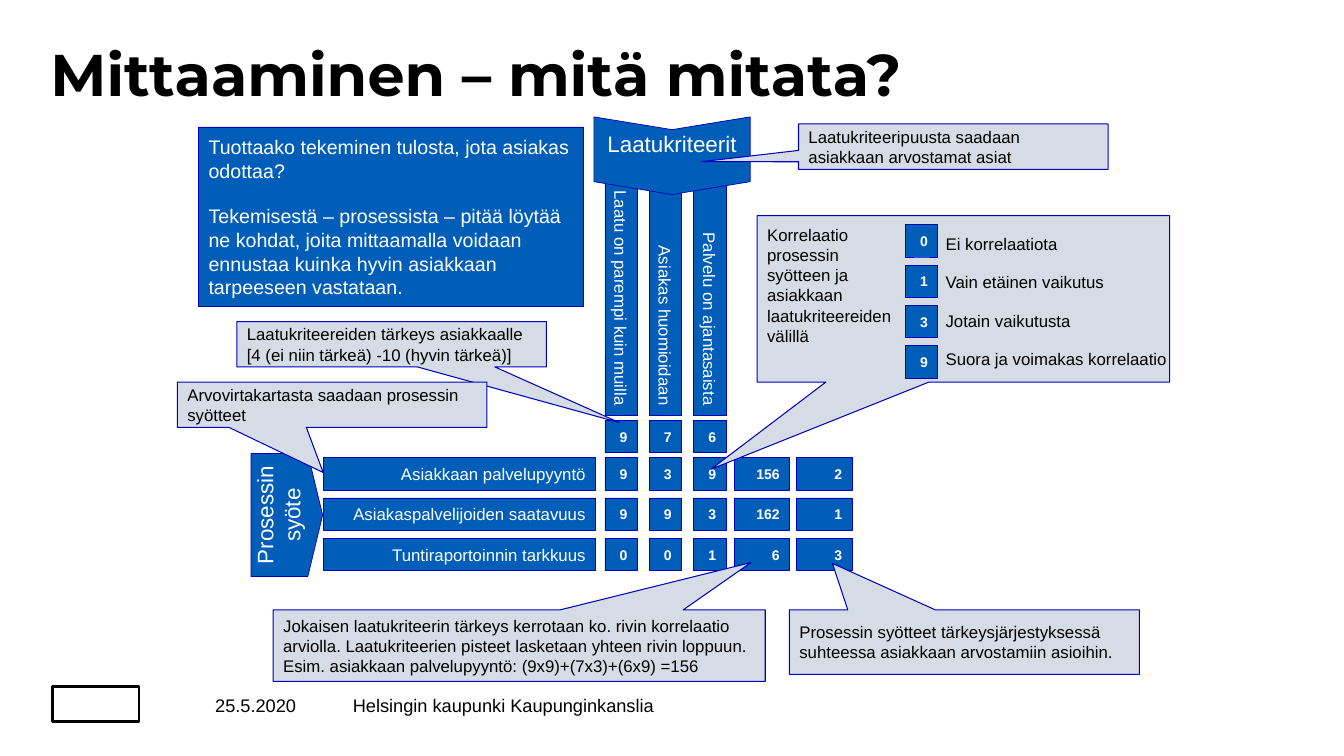
import pptx
import pptx.util
import pptx.dml.color
import pptx.enum.shapes
import pptx.enum.text

Inches = pptx.util.Inches
PRESET = pptx.enum.shapes.MSO_SHAPE
ALIGN = pptx.enum.text.PP_ALIGN
ANCHOR = pptx.enum.text.MSO_ANCHOR

BLUE, OUTLINE, GREY = "005EB8", "0000BF", "D6DCE5"
WHITE, BLACK = "FFFFFF", "000000"
CELL = 0.32

CRITERIA = [
    ("Laatu on parempi kuin muilla", "9"),
    ("Asiakas huomioidaan", "7"),
    ("Palvelu on ajantasaista", "6"),
]
INPUTS = [
    ("Asiakkaan palvelupyyntö", ["9", "3", "9"], ["156", "2"]),
    ("Asiakaspalvelijoiden saatavuus", ["9", "9", "3"], ["162", "1"]),
    ("Tuntiraportoinnin tarkkuus", ["0", "0", "1"], ["6", "3"]),
]
CORRELATIONS = [
    ("0", "Ei korrelaatiota"),
    ("1", "Vain etäinen vaikutus"),
    ("3", "Jotain vaikutusta"),
    ("9", "Suora ja voimakas korrelaatio"),
]
CALLOUTS = [
    ((2.35, 3.19, 3.07, 0.45), (0.736, 1.729),
     ["Laatukriteereiden tärkeys asiakkaalle [4 (ei niin tärkeä) -10 (hyvin tärkeä)]"]),
    ((2.71, 6.05, 4.88, 0.71), (0.471, -1.161),
     ["Jokaisen laatukriteerin tärkeys kerrotaan ko. rivin korrelaatio arviolla. "
      "Laatukriteerien pisteet lasketaan yhteen rivin loppuun.",
      "Esim. asiakkaan palvelupyyntö: (9x9)+(7x3)+(6x9) =156"]),
    ((7.83, 6.05, 3.47, 0.64), (-0.377, -1.219),
     ["Prosessin syötteet tärkeysjärjestyksessä suhteessa asiakkaan arvostamiin asioihin."]),
    ((7.92, 1.23, 3.07, 0.45), (-0.813, 0.332),
     ["Laatukriteeripuusta saadaan asiakkaan arvostamat asiat"]),
    ((1.76, 3.79, 3.07, 0.45), (-0.029, 1.494),
     ["Arvovirtakartasta saadaan prosessin syötteet"]),
]


def rgb(colour):
    return pptx.dml.color.RGBColor.from_string(colour)


def write(shape, paragraphs, size=12, colour=BLACK, bold=False, font="Arial",
          align=ALIGN.LEFT, anchor=ANCHOR.MIDDLE, wrap=True,
          insets=(0.1, 0.05), gap=0, spacing=None, direction=None):
    """Put paragraphs into a shape with one format."""
    frame = shape.text_frame
    frame.word_wrap = wrap
    frame.vertical_anchor = anchor
    frame.margin_left = frame.margin_right = Inches(insets[0])
    frame.margin_top = frame.margin_bottom = Inches(insets[1])
    if direction:
        shape.element.txBody.bodyPr.set("vert", direction)
    for index, words in enumerate(paragraphs):
        paragraph = frame.add_paragraph() if index else frame.paragraphs[0]
        paragraph.alignment = align
        if index:
            paragraph.space_before = pptx.util.Pt(gap)
        if spacing:
            paragraph.line_spacing = spacing
        run = paragraph.add_run()
        run.text = words
        run.font.size = pptx.util.Pt(size)
        run.font.name = font
        run.font.bold = bold
        run.font.color.rgb = rgb(colour)


def add_preset(slide, preset, box, fill=BLUE, line=OUTLINE, width=0.5,
               adjustments=(), rotation=0):
    shape = slide.shapes.add_shape(preset, *map(Inches, box))
    shape.shadow.inherit = False
    shape.fill.solid()
    shape.fill.fore_color.rgb = rgb(fill)
    shape.line.color.rgb = rgb(line)
    shape.line.width = pptx.util.Pt(width)
    shape.rotation = rotation
    for index, value in enumerate(adjustments):
        shape.adjustments[index] = value
    return shape


def add_label(slide, box, words, **text_format):
    write(slide.shapes.add_textbox(*map(Inches, box)), [words], **text_format)


def add_bar(slide, box, words, rotation=0):
    bar = add_preset(slide, PRESET.RECTANGLE, box, rotation=rotation)
    write(bar, [words], colour=WHITE, align=ALIGN.RIGHT)


def add_cell(slide, left, top, value, width=CELL):
    cell = add_preset(slide, PRESET.RECTANGLE, (left, top, width, CELL))
    write(cell, [value], size=10, colour=WHITE, bold=True, align=ALIGN.RIGHT)


def add_callout(slide, box, tip):
    return add_preset(slide, PRESET.RECTANGULAR_CALLOUT, box, fill=GREY,
                      width=0.75, adjustments=tip)


def add_heading_arrow(slide, preset, box, words, adjustment, rotation=0):
    arrow = add_preset(slide, preset, box, adjustments=[adjustment], rotation=rotation)
    write(arrow, [words], size=16, colour=WHITE, align=ALIGN.CENTER,
          anchor=ANCHOR.TOP, insets=(0, 0.05), direction="vert270")


def add_matrix(slide):
    column_lefts = [6 + 0.44 * column for column in range(len(CRITERIA))]
    bar_length = 2.34
    for left, (criterion, weight) in zip(column_lefts, CRITERIA):
        bar_left = left + (CELL - bar_length) / 2
        add_bar(slide, (bar_left, 2.79, bar_length, CELL), criterion, rotation=90)
        add_cell(slide, left, 4.17, weight)
    for row, (process_input, scores, results) in enumerate(INPUTS):
        top = 4.54 + 0.4 * row
        add_bar(slide, (3.21, top, 2.7, CELL), process_input)
        for left, score in zip(column_lefts, scores):
            add_cell(slide, left, top, score)
        for column, result in enumerate(results):
            add_cell(slide, 7.28 + 0.62 * column, top, result, width=0.55)
    add_heading_arrow(slide, PRESET.CHEVRON, (6.28, 0.77, 0.77, 1.55),
                      "Laatukriteerit", 0.165, rotation=90)
    add_heading_arrow(slide, PRESET.PENTAGON, (2.49, 4.5, 0.71, 1.22),
                      "Prosessin syöte", 0.207)


def add_correlation_key(slide):
    add_callout(slide, (7.51, 2.14, 4.09, 1.65), (-0.612, 1.024))
    add_label(slide, (7.51, 2.18, 1.58, 1.31),
              "Korrelaatio prosessin syötteen ja asiakkaan laatukriteereiden välillä",
              anchor=ANCHOR.TOP)
    for row, (value, meaning) in enumerate(CORRELATIONS):
        add_cell(slide, 8.98, 2.23 + 0.4 * row, value)
        add_label(slide, (9.28, 2.27 + 0.38 * row, 2.41, 0.3), meaning,
                  anchor=ANCHOR.TOP, wrap=False)


def add_question(slide):
    question = add_preset(slide, PRESET.RECTANGLE, (1.97, 1.26, 3.82, 1.78))
    write(question,
          ["Tuottaako tekeminen tulosta, jota asiakas odottaa?",
           "Tekemisestä – prosessista – pitää löytää ne kohdat, joita mittaamalla "
           "voidaan ennustaa kuinka hyvin asiakkaan tarpeeseen vastataan."],
          size=14, colour=WHITE, gap=16)


def add_title(slide):
    title = slide.shapes.title
    title.left, title.top, title.width, title.height = map(Inches, (0.5, 0.45, 12.29, 0.86))
    write(title, ["Mittaaminen – mitä mitata?"], size=42, bold=True, font="Montserrat",
          anchor=ANCHOR.TOP, insets=(0, 0), spacing=0.9)


def add_footer(slide):
    add_preset(slide, PRESET.RECTANGLE, (0.52, 6.81, 0.86, 0.35), fill=WHITE,
               line=BLACK, width=2)
    add_label(slide, (1.82, 6.86, 1.43, 0.28), "25.5.2020", size=13,
              align=ALIGN.CENTER, insets=(0, 0))
    add_label(slide, (3.5, 6.86, 4.5, 0.28), "Helsingin kaupunki Kaupunginkanslia",
              size=13, insets=(0, 0))


def main():
    deck = pptx.Presentation()
    deck.slide_width, deck.slide_height = Inches(13.33), Inches(7.5)
    slide = deck.slides.add_slide(deck.slide_layouts[5])
    add_title(slide)
    add_footer(slide)
    add_matrix(slide)
    add_question(slide)
    add_correlation_key(slide)
    for box, tip, paragraphs in CALLOUTS:
        write(add_callout(slide, box, tip), paragraphs)
    deck.save("out.pptx")


if __name__ == "__main__":
    main()
